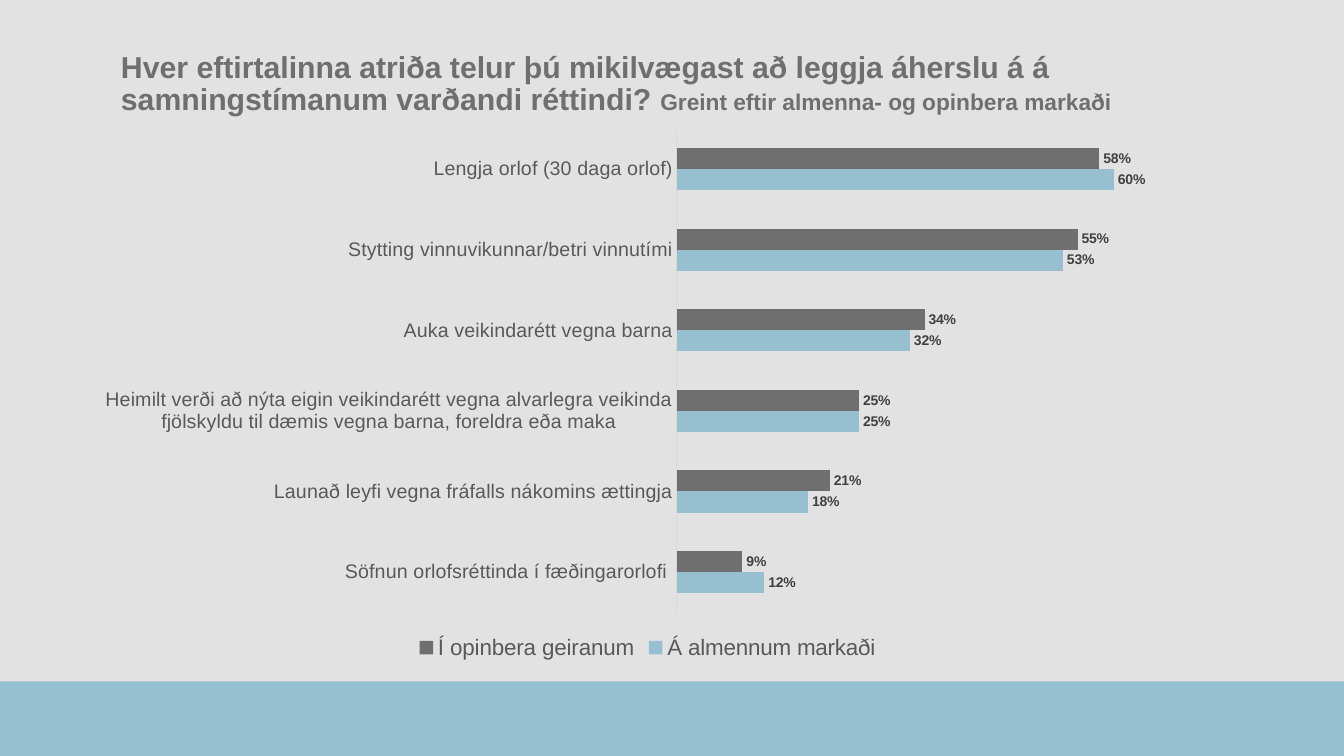
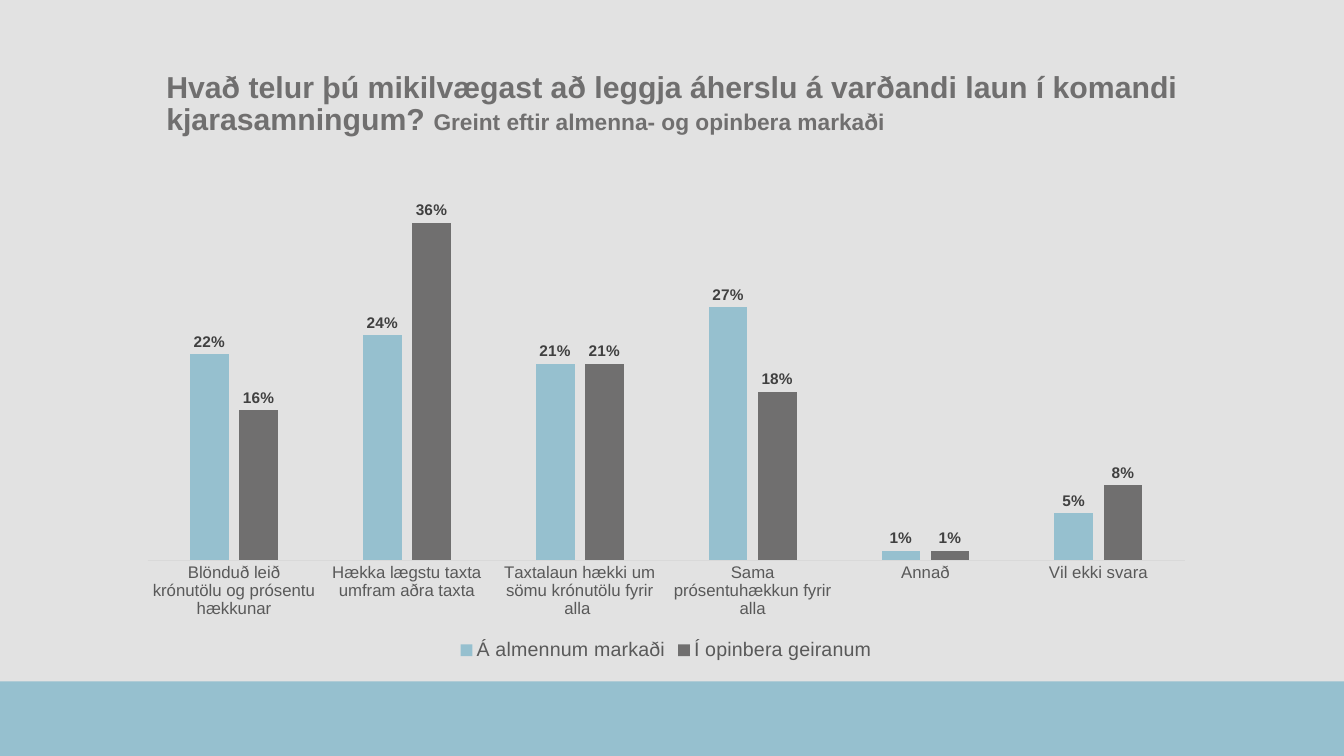
from lxml import etree
from pptx import Presentation
from pptx.chart.data import CategoryChartData
from pptx.dml.color import RGBColor
from pptx.enum.chart import XL_CHART_TYPE, XL_LABEL_POSITION, XL_LEGEND_POSITION, XL_TICK_MARK
from pptx.enum.shapes import MSO_SHAPE
from pptx.enum.text import MSO_ANCHOR, MSO_AUTO_SIZE, PP_ALIGN
from pptx.oxml.ns import qn
from pptx.util import Pt

BAR, COLUMN = XL_CHART_TYPE.BAR_CLUSTERED, XL_CHART_TYPE.COLUMN_CLUSTERED
BOTTOM, OUTSIDE = XL_LEGEND_POSITION.BOTTOM, XL_LABEL_POSITION.OUTSIDE_END
NO_TICK = XL_TICK_MARK.NONE

BACKGROUND = RGBColor(0xE2, 0xE2, 0xE2)
BLUE = RGBColor(0x96, 0xC0, 0xCF)
GREY = RGBColor(0x70, 0x6F, 0x6F)
AXIS_TEXT = RGBColor(0x59, 0x59, 0x59)
LABEL_TEXT = RGBColor(0x40, 0x40, 0x40)
AXIS_LINE = RGBColor(0xD9, 0xD9, 0xD9)
FONT = "Arial"
WIDTH, HEIGHT, BAND_TOP = 960, 540, 486.7

PRIVATE, PUBLIC = "Á almennum markaði", "Í opinbera geiranum"
SERIES_COLORS = {PRIVATE: BLUE, PUBLIC: GREY}
SUBTITLE = "Greint eftir almenna- og opinbera markaði"


def set_font(font, size, color, bold=False):
    font.name, font.size, font.bold = FONT, Pt(size), bold
    font.color.rgb = color


class Deck:
    """Holds the shared style and the current slide."""

    def __init__(self):
        self.prs = Presentation()
        self.prs.slide_width, self.prs.slide_height = Pt(WIDTH), Pt(HEIGHT)
        fill = self.prs.slide_master.background.fill
        fill.solid()
        fill.fore_color.rgb = BACKGROUND

    def slide(self):
        self.s = self.prs.slides.add_slide(self.prs.slide_layouts[5])
        self.band()

    def band(self):
        sp = self.s.shapes.add_shape(MSO_SHAPE.RECTANGLE, 0, Pt(BAND_TOP),
                                     Pt(WIDTH), Pt(HEIGHT - BAND_TOP))
        sp.shadow.inherit = False
        sp.fill.solid()
        sp.fill.fore_color.rgb = BLUE
        sp.line.fill.background()

    def title(self, question, x, y, w, h=49):
        sp = self.s.shapes.title
        sp.left, sp.top, sp.width, sp.height = Pt(x), Pt(y), Pt(w), Pt(h)
        tf = sp.text_frame
        tf.word_wrap, tf.auto_size = True, MSO_AUTO_SIZE.NONE
        tf.vertical_anchor = MSO_ANCHOR.MIDDLE
        p = tf.paragraphs[0]
        p.alignment, p.line_spacing = PP_ALIGN.LEFT, 0.9
        for text, size in ((question + " ", 21.6), (SUBTITLE, 16.2)):
            r = p.add_run()
            r.text = text
            set_font(r.font, size, GREY, bold=True)

    def chart(self, kind, box, plot_box, rows, maximum, gap, overlap,
              axis_size, legend_size, label_size):
        """rows holds (category, private value, public value)."""
        data = CategoryChartData(number_format="0%")
        data.categories = [row[0] for row in rows]
        for i, name in enumerate(SERIES_COLORS, 1):
            data.add_series(name, [row[i] for row in rows])
        chart = self.s.shapes.add_chart(kind, *map(Pt, box), data).chart
        chart.has_title = False
        chart.font.name, chart.font.size = FONT, Pt(10)

        # Axes
        cat, val = chart.category_axis, chart.value_axis
        cat.major_tick_mark = cat.minor_tick_mark = NO_TICK
        cat.format.line.color.rgb, cat.format.line.width = AXIS_LINE, Pt(0.75)
        set_font(cat.tick_labels.font, axis_size, AXIS_TEXT)
        val.minimum_scale, val.maximum_scale = 0, maximum
        val.has_major_gridlines = val.visible = False

        # Legend
        chart.has_legend = True
        chart.legend.position, chart.legend.include_in_layout = BOTTOM, False
        set_font(chart.legend.font, legend_size, AXIS_TEXT)

        # Bars and value labels
        plot = chart.plots[0]
        plot.gap_width, plot.overlap, plot.vary_by_categories = gap, overlap, False
        for series in plot.series:
            series.invert_if_negative = False
            series.format.fill.solid()
            series.format.fill.fore_color.rgb = SERIES_COLORS[series.name]
            labels = series.data_labels
            labels.show_value, labels.position = True, OUTSIDE
            labels.number_format, labels.number_format_is_linked = "0%", False
            set_font(labels.font, label_size, LABEL_TEXT, bold=True)
        self.place_plot(chart, plot_box)

    @staticmethod
    def place_plot(chart, plot_box):
        """Fix the inner plot area as fractions of the chart."""
        area = chart.plots[0]._element.getparent()
        for old in area.findall(qn("c:layout")):
            area.remove(old)
        layout = etree.Element(qn("c:layout"))
        manual = etree.SubElement(layout, qn("c:manualLayout"))
        settings = [("layoutTarget", "inner"), ("xMode", "edge"), ("yMode", "edge")]
        for tag, value in settings + list(zip("xywh", plot_box)):
            etree.SubElement(manual, qn("c:" + tag)).set("val", str(value))
        area.insert(0, layout)


def main():
    deck = Deck()

    # Rights
    deck.slide()
    deck.title("Hver eftirtalinna atriða telur þú mikilvægast að leggja áherslu á á "
               "samningstímanum varðandi réttindi?", 79.2, 36, 799.2)
    deck.chart(BAR, (59.8, 85, 805.7, 389.5), (0.526, 0.018, 0.452, 0.887), [
        ("Söfnun orlofsréttinda í fæðingarorlofi ", 0.12, 0.09),
        ("Launað leyfi vegna fráfalls nákomins ættingja", 0.18, 0.21),
        ("Heimilt verði að nýta eigin veikindarétt vegna alvarlegra veikinda "
         "fjölskyldu til dæmis vegna barna, foreldra eða maka", 0.25, 0.25),
        ("Auka veikindarétt vegna barna", 0.32, 0.34),
        ("Stytting vinnuvikunnar/betri vinnutími", 0.53, 0.55),
        ("Lengja orlof (30 daga orlof)", 0.6, 0.58),
    ], maximum=0.7, gap=182, overlap=0, axis_size=14, legend_size=16, label_size=10)

    # Wages
    deck.slide()
    deck.title("Hvað telur þú mikilvægast að leggja áherslu á varðandi laun í komandi "
               "kjarasamningum?", 111.6, 50.4, 737.3)
    deck.chart(COLUMN, (90, 123.1, 771.8, 352.1), (0.02, 0.027, 0.96, 0.76), [
        ("Blönduð leið krónutölu og prósentu hækkunar", 0.22, 0.16),
        ("Hækka lægstu taxta umfram aðra taxta", 0.24, 0.36),
        ("Taxtalaun hækki um sömu krónutölu fyrir alla ", 0.21, 0.21),
        ("Sama prósentuhækkun fyrir alla", 0.27, 0.18),
        ("Annað", 0.01, 0.01),
        ("Vil ekki svara", 0.05, 0.08),
    ], maximum=0.4, gap=219, overlap=-27, axis_size=12, legend_size=14, label_size=11)

    deck.prs.save("out.pptx")


if __name__ == "__main__":
    main()
